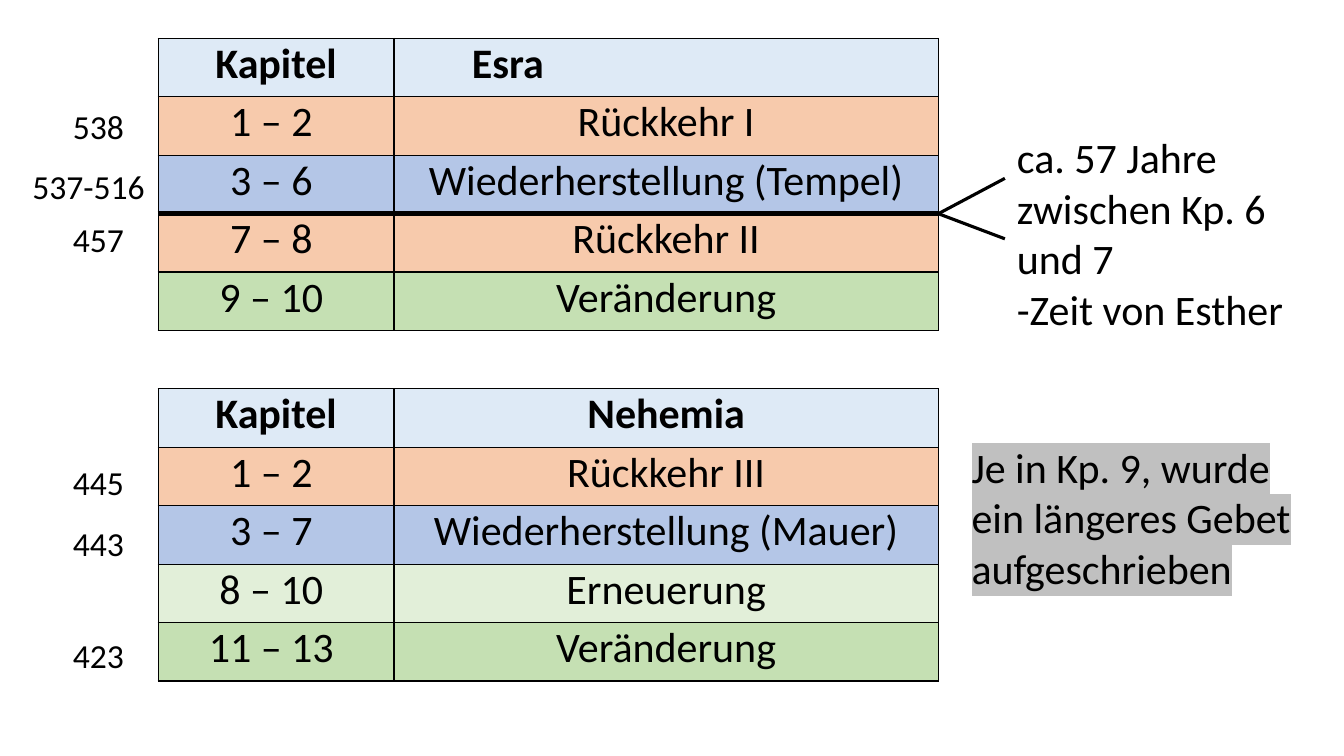
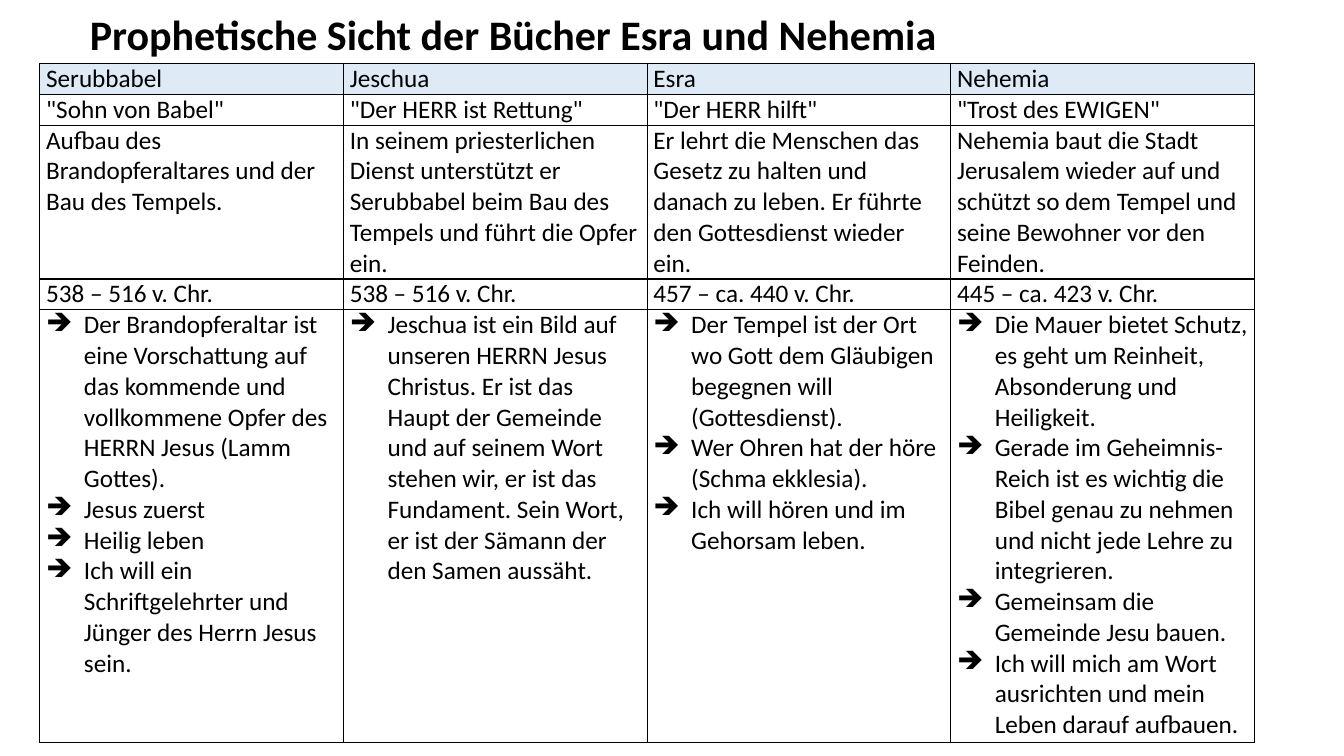
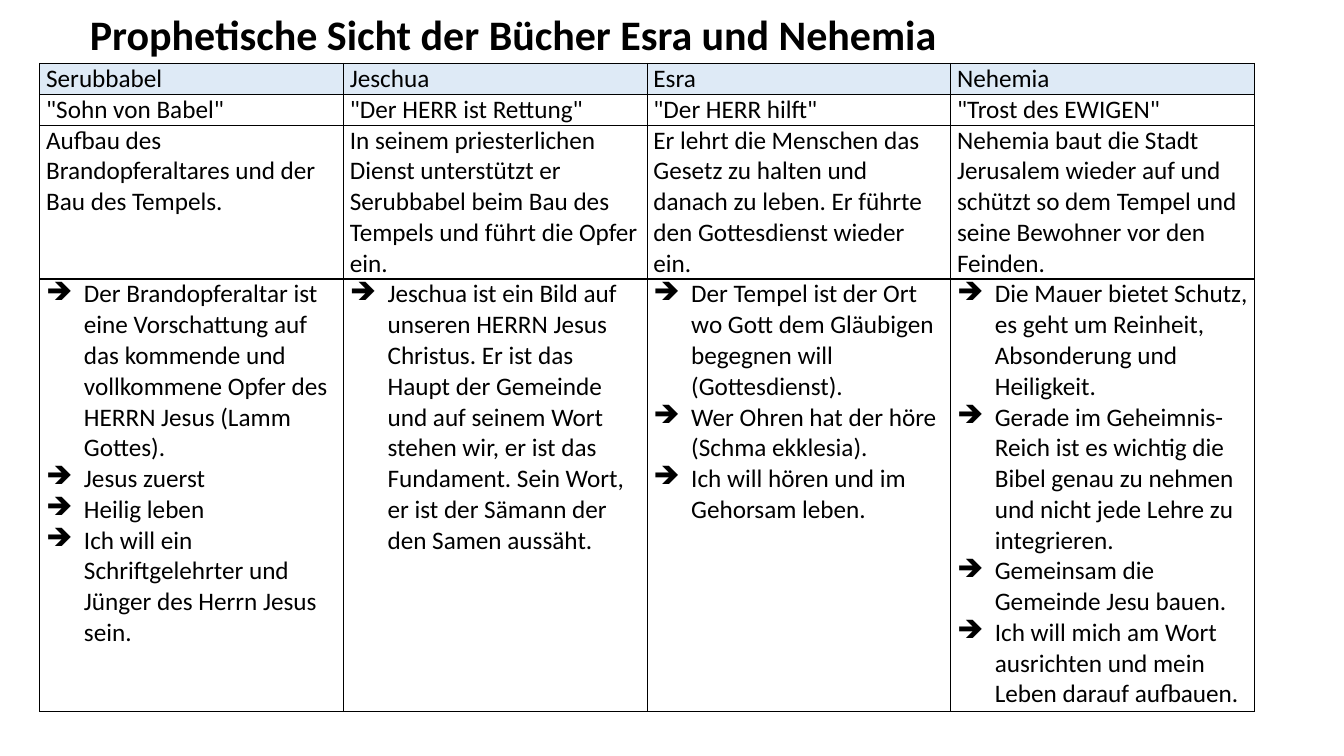
from dataclasses import dataclass
from typing import Optional, Sequence

import lxml.etree
import pptx
import pptx.dml.color
import pptx.enum.shapes
import pptx.enum.text
import pptx.oxml
import pptx.oxml.ns
import pptx.util

Pt = pptx.util.Pt
RGBColor = pptx.dml.color.RGBColor
Align = pptx.enum.text.PP_ALIGN
qn = pptx.oxml.ns.qn

BLACK = RGBColor(0x00, 0x00, 0x00)
HEADER_BLUE = RGBColor(0xDE, 0xEA, 0xF6)
RETURN_ORANGE = RGBColor(0xF7, 0xCA, 0xAC)
RESTORE_BLUE = RGBColor(0xB4, 0xC6, 0xE7)
RENEWAL_GREEN = RGBColor(0xE2, 0xEF, 0xD9)
CHANGE_GREEN = RGBColor(0xC5, 0xE0, 0xB3)
MARKER_GREY = RGBColor(0xC0, 0xC0, 0xC0)

FONT = "Calibri"
LARGE, MEDIUM, SMALL = 30, 24, 18
THIN, THICK = 1, 4.5
BULLET_INDENT = 27
TITLE = "Prophetische Sicht der Bücher Esra und Nehemia"

CHAPTERS_LEFT, CHAPTERS_TOP = 113, 27.4
CHAPTERS_COLUMNS = (168.5, 388.8)
CHAPTER_HEIGHT = 41.75
ROWS_BEFORE_PAUSE = 3


@dataclass(frozen=True)
class Row:
    cells: Sequence[Sequence[str]]
    height: float
    fill: Optional[RGBColor] = None
    bold: bool = False
    bullet: str = ""
    boxed: bool = True
    top: float = THIN
    bottom: float = THIN
    tab: float = 0


@dataclass(frozen=True)
class Note:
    left: float
    top: float
    width: float
    height: float
    lines: Sequence[str]
    size: int = LARGE
    highlight: Optional[RGBColor] = None


def chapter(number: str, topic: str, fill: RGBColor, **extra) -> Row:
    return Row(((number,), (topic,)), CHAPTER_HEIGHT, fill, **extra)


CHAPTER_ROWS = (
    chapter("Kapitel", "\tEsra", HEADER_BLUE, bold=True, tab=76.3),
    chapter("1 – 2 ", "Rückkehr I", RETURN_ORANGE),
    chapter("3 – 6 ", "Wiederherstellung (Tempel)", RESTORE_BLUE, bottom=THICK),
    chapter("7 – 8 ", "Rückkehr II", RETURN_ORANGE, top=THICK),
    chapter("9 – 10 ", "Veränderung", CHANGE_GREEN),
    Row(((), ()), CHAPTER_HEIGHT, boxed=False),
    chapter("Kapitel", "Nehemia", HEADER_BLUE, bold=True),
    chapter("1 – 2 ", "Rückkehr III", RETURN_ORANGE),
    chapter("3 – 7 ", "Wiederherstellung (Mauer)", RESTORE_BLUE),
    chapter("8 – 10 ", "Erneuerung", RENEWAL_GREEN),
    chapter("11 – 13 ", "Veränderung", CHANGE_GREEN),
)

YEARS = (
    ("538", 45, 72),
    ("537-516", 16, 115.2),
    ("457", 45, 152.6),
    ("445", 45, 326.2),
    ("443", 45, 370),
    ("423", 45, 450),
)

NOTES = (
    *(Note(left, top, CHAPTERS_LEFT - left, 36, (year,), MEDIUM) for year, left, top in YEARS),
    Note(686.9, 311.8, 249, 116.6,
         ("Je in Kp. 9, wurde ein längeres Gebet aufgeschrieben",), highlight=MARKER_GREY),
    Note(719.3, 90.7, 204.5, 152.6,
         ("ca. 57 Jahre zwischen Kp. 6 und 7", "-Zeit von Esther")),
)

NAMES = Row((("Serubbabel",), ("Jeschua",), ("Esra",), ("Nehemia",)), 21, HEADER_BLUE)
MEANINGS = Row((
    ('"Sohn von Babel"',),
    ('"Der HERR ist Rettung"',),
    ('"Der HERR hilft"',),
    ('"Trost des EWIGEN"',),
), 21)
TASKS = Row((
    ("Aufbau des Brandopferaltares und der Bau des Tempels.",),
    ("In seinem priesterlichen Dienst unterstützt er Serubbabel beim Bau des Tempels "
     "und führt die Opfer ein.",),
    ("Er lehrt die Menschen das Gesetz zu halten und danach zu leben. "
     "Er führte den Gottesdienst wieder ein.",),
    ("Nehemia baut die Stadt Jerusalem wieder auf und schützt so dem Tempel und "
     "seine Bewohner vor den Feinden.",),
), 105)
DATES = Row((
    ("538 – 516 v. Chr.",),
    ("538 – 516 v. Chr.",),
    ("457 – ca. 440 v. Chr.",),
    ("445 – ca. 423 v. Chr.",),
), 21)
LESSONS = Row((
    ("Der Brandopferaltar ist eine Vorschattung auf das kommende und vollkommene Opfer "
     "des HERRN Jesus (Lamm Gottes).",
     "Jesus zuerst",
     "Heilig leben",
     "Ich will ein Schriftgelehrter und Jünger des Herrn Jesus sein."),
    ("Jeschua ist ein Bild auf unseren HERRN Jesus Christus. Er ist das Haupt der Gemeinde "
     "und auf seinem Wort stehen wir, er ist das Fundament. Sein Wort, er ist der Sämann "
     "der den Samen aussäht.",),
    ("Der Tempel ist der Ort wo Gott dem Gläubigen begegnen will (Gottesdienst).",
     "Wer Ohren hat der höre (Schma ekklesia).",
     "Ich will hören und im Gehorsam leben."),
    ("Die Mauer bietet Schutz, es geht um Reinheit, Absonderung und Heiligkeit.",
     "Gerade im Geheimnis-Reich ist es wichtig die Bibel genau zu nehmen und nicht jede "
     "Lehre zu integrieren.",
     "Gemeinsam die Gemeinde Jesu bauen.",
     "Ich will mich am Wort ausrichten und mein Leben darauf aufbauen."),
), 309, bullet="➔")


def add_child(parent, tag: str, **attributes):
    return lxml.etree.SubElement(parent, qn(tag), attributes)


def write(frame, lines: Sequence[str], *, size: int, bold: bool = False, align=Align.LEFT,
          highlight: Optional[RGBColor] = None, bullet: str = "", tab: float = 0,
          spacing: Optional[float] = None) -> None:
    """Fill a text frame, one paragraph a line; tab is the place of a centred tab stop."""
    frame.word_wrap = True
    for index, line in enumerate(lines):
        paragraph = frame.add_paragraph() if index else frame.paragraphs[0]
        paragraph.alignment = align
        if spacing:
            paragraph.line_spacing = spacing
        run = paragraph.add_run()
        run.text = line
        run.font.size = Pt(size)
        run.font.bold = bold
        run.font.color.rgb = BLACK
        run.font.name = FONT
        if highlight is not None:
            marker = pptx.oxml.parse_xml(
                f'<a:highlight {pptx.oxml.ns.nsdecls("a")}><a:srgbClr val="{highlight}"/></a:highlight>')
            run.font._element.find(qn("a:latin")).addprevious(marker)
        properties = paragraph._p.get_or_add_pPr()
        if bullet:
            properties.set("marL", str(int(Pt(BULLET_INDENT))))
            properties.set("indent", str(int(Pt(-BULLET_INDENT))))
            add_child(properties, "a:buChar", char=bullet)
        if tab:
            stops = add_child(properties, "a:tabLst")
            add_child(stops, "a:tab", pos=str(int(Pt(tab))), algn="ctr")


def set_borders(cell, row: Row) -> None:
    side = THIN if row.boxed else 0
    properties = cell._tc.get_or_add_tcPr()
    for tag, width in (("a:lnL", side), ("a:lnR", side), ("a:lnT", row.top), ("a:lnB", row.bottom)):
        border = add_child(properties, tag, w=str(int(Pt(width))))
        if width:
            add_child(add_child(border, "a:solidFill"), "a:srgbClr", val=str(BLACK))
        else:
            add_child(border, "a:noFill")


def add_grid(slide, left: float, top: float, columns: Sequence[float], rows: Sequence[Row], *,
             size: int, margin: float, align=Align.LEFT) -> None:
    frame = slide.shapes.add_table(len(rows), len(columns), Pt(left), Pt(top),
                                   Pt(sum(columns)), Pt(sum(row.height for row in rows)))
    table = frame.table
    table.first_row = table.horz_banding = False
    for column, width in zip(table.columns, columns):
        column.width = Pt(width)
    for row_index, row in enumerate(rows):
        table.rows[row_index].height = Pt(row.height)
        for column_index, lines in enumerate(row.cells):
            cell = table.cell(row_index, column_index)
            cell.margin_left = cell.margin_right = Pt(margin)
            cell.margin_top = cell.margin_bottom = Pt(0)
            set_borders(cell, row)
            if row.fill is None:
                cell.fill.background()
            else:
                cell.fill.solid()
                cell.fill.fore_color.rgb = row.fill
            tabbed = any("\t" in line for line in lines)
            write(cell.text_frame, lines, size=size, bold=row.bold, bullet=row.bullet,
                  align=Align.LEFT if tabbed else align, tab=row.tab if tabbed else 0)


def add_note(slide, note: Note) -> None:
    box = slide.shapes.add_textbox(Pt(note.left), Pt(note.top), Pt(note.width), Pt(note.height))
    write(box.text_frame, note.lines, size=note.size, highlight=note.highlight)


def add_line(slide, start: tuple[float, float], end: tuple[float, float]) -> None:
    line = slide.shapes.add_connector(pptx.enum.shapes.MSO_CONNECTOR.STRAIGHT,
                                      *map(Pt, start), *map(Pt, end))
    line.line.color.rgb = BLACK
    line.line.width = Pt(2.25)
    add_child(line._element.spPr, "a:effectLst")


def add_chapters_slide(deck) -> None:
    slide = deck.slides.add_slide(deck.slide_layouts[6])
    add_grid(slide, CHAPTERS_LEFT, CHAPTERS_TOP, CHAPTERS_COLUMNS, CHAPTER_ROWS,
             size=LARGE, margin=5, align=Align.CENTER)
    for note in NOTES:
        add_note(slide, note)
    pause = (CHAPTERS_LEFT + sum(CHAPTERS_COLUMNS),
             CHAPTERS_TOP + ROWS_BEFORE_PAUSE * CHAPTER_HEIGHT)
    for end_y in (127.4, 170.6):
        add_line(slide, pause, (717.8, end_y))


def add_prophetic_slide(deck, rows: Sequence[Row]) -> None:
    slide = deck.slides.add_slide(deck.slide_layouts[5])
    title = slide.shapes.title
    title.left, title.top, title.width, title.height = Pt(57), Pt(0), Pt(715.7), Pt(44.6)
    title.text_frame.auto_size = pptx.enum.text.MSO_AUTO_SIZE.NONE
    title.text_frame.vertical_anchor = pptx.enum.text.MSO_ANCHOR.TOP
    write(title.text_frame, (TITLE,), size=LARGE, bold=True, spacing=1.07)
    add_grid(slide, 28.5, 45.4, (216.9,) * 4, rows, size=SMALL, margin=4.5)


def main() -> None:
    deck = pptx.Presentation()
    deck.slide_width, deck.slide_height = Pt(960), Pt(540)
    add_chapters_slide(deck)
    add_prophetic_slide(deck, (NAMES, MEANINGS, TASKS, DATES, LESSONS))
    add_prophetic_slide(deck, (NAMES, MEANINGS, TASKS, LESSONS))
    deck.save("out.pptx")


if __name__ == "__main__":
    main()
